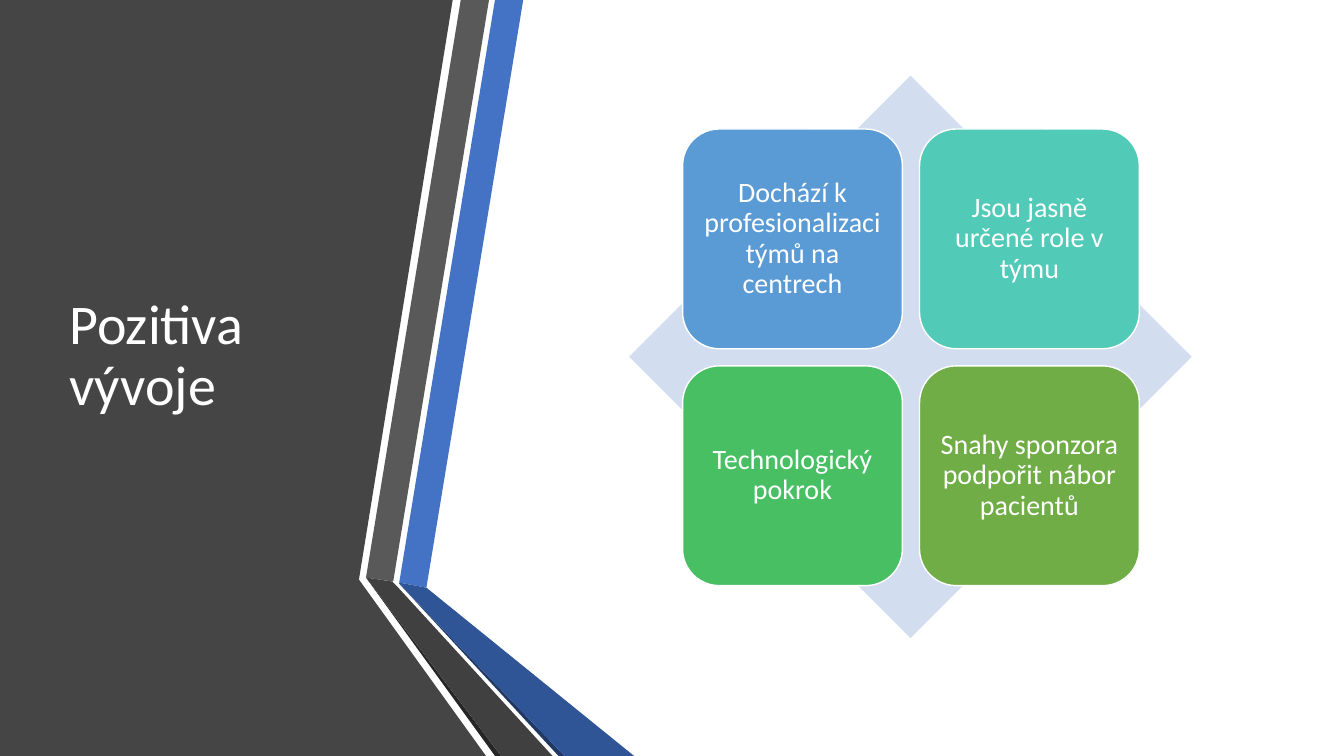
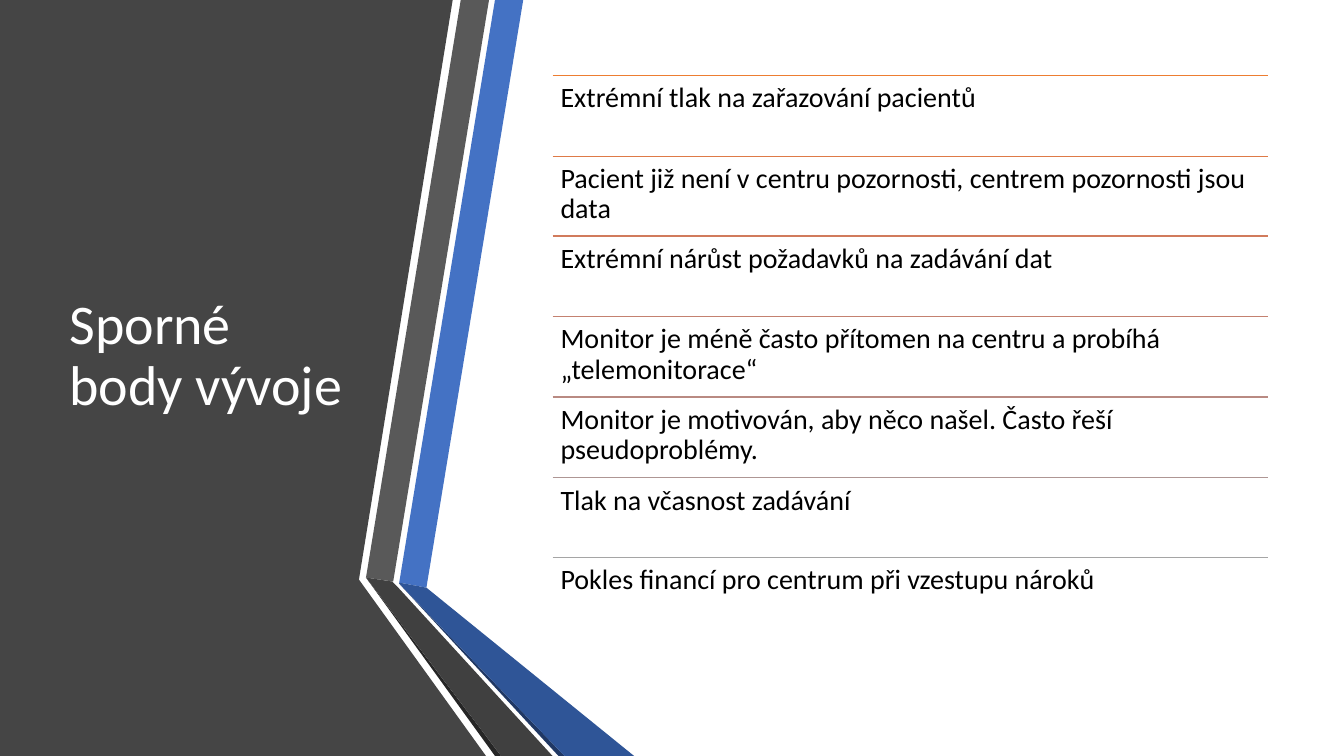
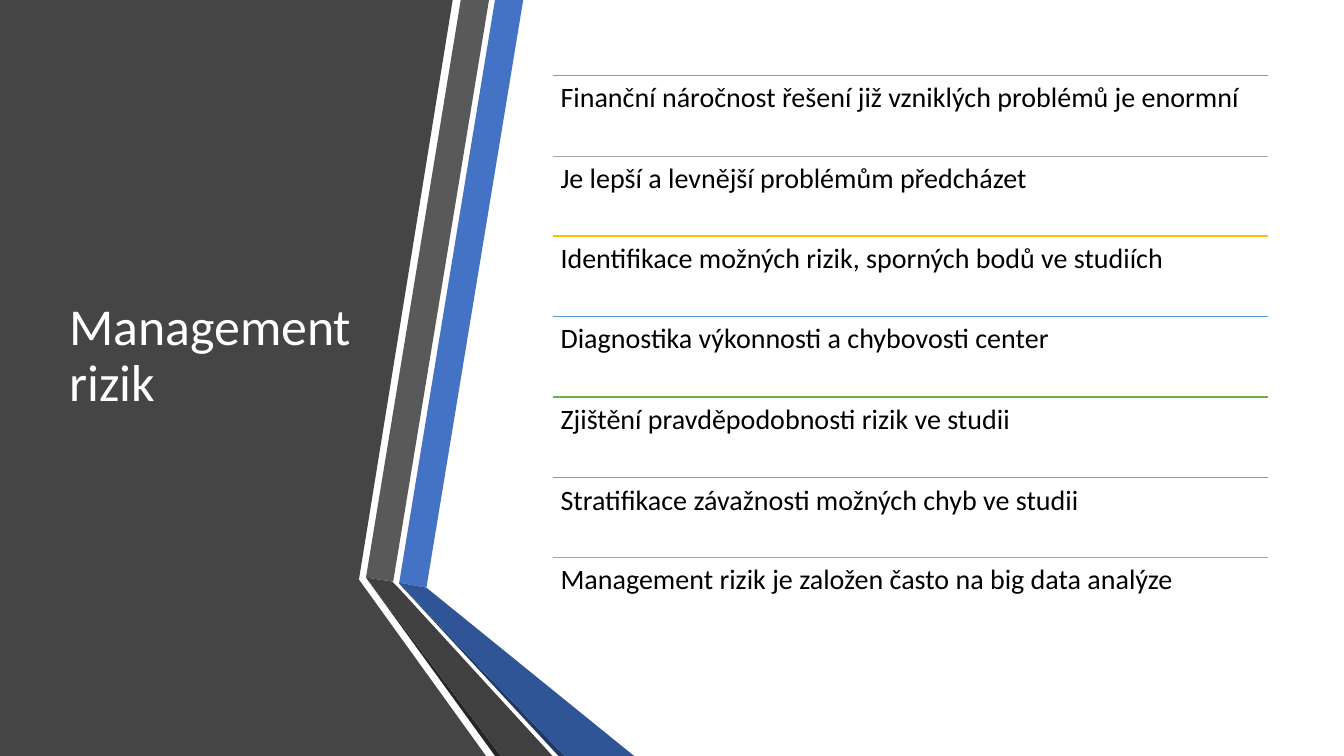
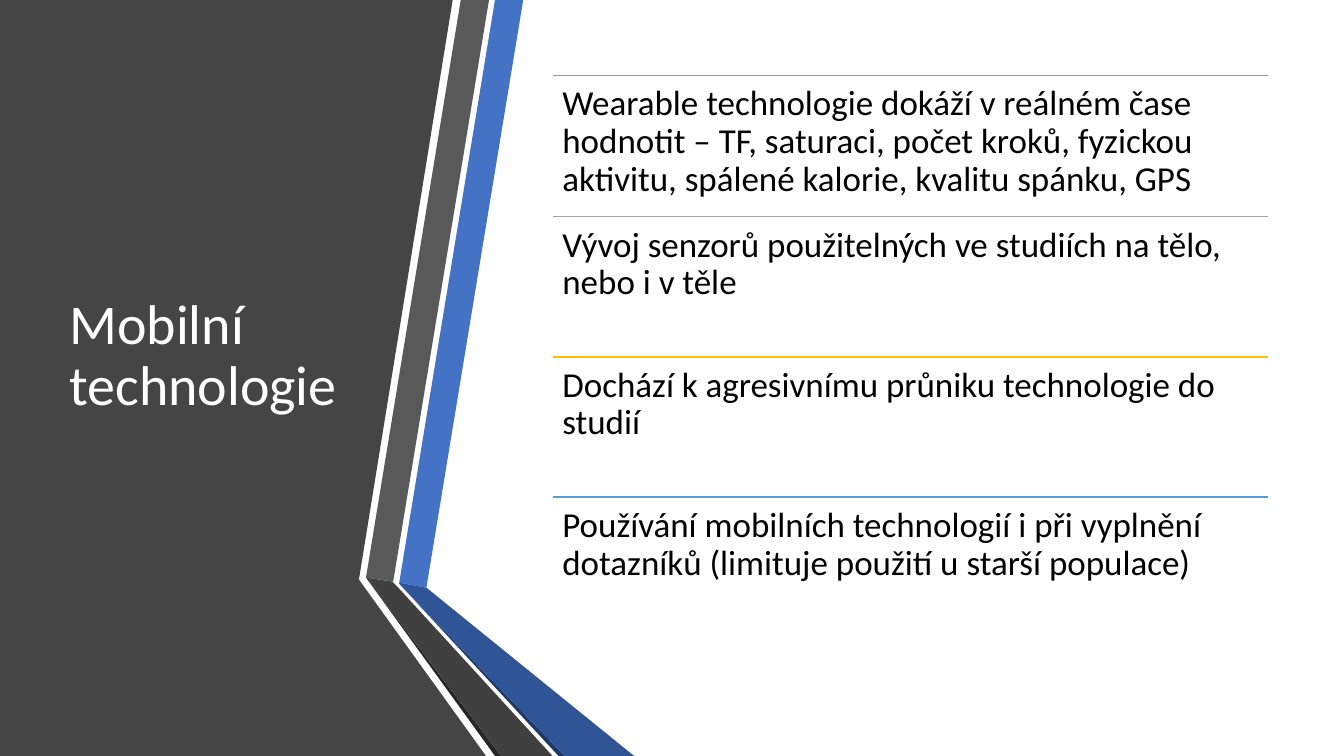
from itertools import cycle

from lxml import etree
from pptx import Presentation
from pptx.dml.color import RGBColor
from pptx.enum.shapes import MSO_CONNECTOR, MSO_SHAPE
from pptx.enum.text import MSO_ANCHOR, PP_ALIGN
from pptx.oxml.ns import qn
from pptx.util import Pt

PX = 9144  # EMU per px, 100 px to the inch
SLIDE_WIDTH, SLIDE_HEIGHT = 1333, 750

DIAMOND = MSO_SHAPE.DIAMOND
ROUNDED = MSO_SHAPE.ROUNDED_RECTANGLE
STRAIGHT = MSO_CONNECTOR.STRAIGHT
TOP, MIDDLE = MSO_ANCHOR.TOP, MSO_ANCHOR.MIDDLE
LEFT, CENTER = PP_ALIGN.LEFT, PP_ALIGN.CENTER

FONT = "Calibri"
WHITE, BLACK = "FFFFFF", "000000"
ACCENTS = ["ED7D31", "A5A5A5", "FFC000", "5B9BD5", "70AD47"]
ORANGE_TO_GRAY = ["ED7D31", "DE7A47", "D17B5C", "C48170", "B98A82", "AE9694", "A5A5A5"]

CONTENT_TOP, CONTENT_HEIGHT = 75, 558
LIST_LEFT, LIST_WIDTH = 548, 710

# Colour and corner points of the side panel and its folded bands, back to front
BACKDROP = [
    ("454545", [(0, 0), (449, 0), (356, 575), (482, 750), (0, 750)]),
    ("4472C4", [(396, 578), (423, 583), (519, 0), (491, 0)]),
    ("595959", [(485, 0), (457, 0), (363, 573), (390, 577)]),
    ("262626", [(363, 573), (491, 750), (497, 750)]),
    ("203864", [(396, 579), (554, 750), (560, 750)]),
    ("2F5597", [(396, 579), (560, 750), (629, 750), (423, 583), (396, 578)]),
    ("404040", [(548, 750), (395, 583), (389, 577), (363, 573), (497, 750)]),
]


def rgb(color):
    return RGBColor.from_string(color)


def write(shape, text, size=20, color=BLACK, align=LEFT, anchor=TOP, inset=(8, 8)):
    """Fill a shape with one paragraph; a newline becomes a line break."""
    frame = shape.text_frame
    frame.word_wrap = True
    frame.vertical_anchor = anchor
    frame.margin_left = frame.margin_right = inset[0] * PX
    frame.margin_top = frame.margin_bottom = inset[1] * PX
    paragraph = frame.paragraphs[0]
    paragraph.alignment = align
    paragraph.line_spacing = 0.9
    for index, line in enumerate(text.split("\n")):
        if index:
            paragraph.add_line_break()
        run = paragraph.add_run()
        run.text = line
        run.font.name = FONT
        run.font.size = Pt(size)
        run.font.color.rgb = rgb(color)


class Deck:
    def __init__(self):
        self.presentation = Presentation()
        self.presentation.slide_width = SLIDE_WIDTH * PX
        self.presentation.slide_height = SLIDE_HEIGHT * PX
        self.slide = None

    def new_slide(self, title, title_size=40):
        self.slide = self.presentation.slides.add_slide(self.presentation.slide_layouts[6])
        for color, points in BACKDROP:
            self.polygon(points, color)
        self.text(59, CONTENT_TOP, 304, CONTENT_HEIGHT, title,
                  size=title_size, color=WHITE, anchor=MIDDLE, inset=(10, 5))

    def paint(self, shape, fill, outline=None):
        shape.shadow.inherit = False
        shape.fill.solid()
        shape.fill.fore_color.rgb = rgb(fill)
        if outline:
            shape.line.color.rgb = rgb(outline)
            shape.line.width = Pt(1)
        else:
            shape.line.fill.background()

    def polygon(self, points, fill):
        builder = self.slide.shapes.build_freeform(*points[0], scale=PX)
        builder.add_line_segments(points[1:], close=True)
        self.paint(builder.convert_to_shape(), fill)

    def shape(self, kind, left, top, width, height, fill, outline=None):
        shape = self.slide.shapes.add_shape(kind, left * PX, top * PX, width * PX, height * PX)
        self.paint(shape, fill, outline)
        return shape

    def text(self, left, top, width, height, text, **style):
        box = self.slide.shapes.add_textbox(left * PX, top * PX, width * PX, height * PX)
        write(box, text, **style)

    def rule(self, left, top, width, color):
        line = self.slide.shapes.add_connector(
            STRAIGHT, left * PX, top * PX, (left + width) * PX, top * PX)
        line.line.color.rgb = rgb(color)
        line.line.width = Pt(1)
        etree.SubElement(line._element.spPr, qn("a:effectLst"))

    def ruled_list(self, items, colors, **style):
        """Share the content height equally among items, each under a rule."""
        for index, (item, color) in enumerate(zip(items, cycle(colors))):
            top = CONTENT_TOP + round(index * CONTENT_HEIGHT / len(items))
            self.rule(LIST_LEFT, top, LIST_WIDTH, color)
            self.text(LIST_LEFT, top, LIST_WIDTH, CONTENT_HEIGHT // len(items), item, **style)

    def card_grid(self, cards):
        """Place four cards, two to a row, over a diamond."""
        left, top, size, step = 677, 128, 218, 235
        self.shape(DIAMOND, 624, CONTENT_TOP, CONTENT_HEIGHT, CONTENT_HEIGHT, "D2DEEF")
        for index, (label, fill) in enumerate(cards):
            row, column = divmod(index, 2)
            card = self.shape(ROUNDED, left + column * step, top + row * step,
                              size, size, fill, WHITE)
            write(card, label, color=WHITE, align=CENTER, anchor=MIDDLE)


def main():
    deck = Deck()

    deck.new_slide("Pozitiva vývoje")
    deck.card_grid([
        ("Dochází k profesionalizaci týmů na centrech", "5B9BD5"),
        ("Jsou jasně určené role v týmu", "52CAB8"),
        ("Technologický pokrok", "49BF64"),
        ("Snahy sponzora podpořit nábor pacientů", "70AD47"),
    ])

    deck.new_slide("Sporné\nbody vývoje")
    deck.ruled_list([
        "Extrémní tlak na zařazování pacientů",
        "Pacient již není v centru pozornosti, centrem pozornosti jsou data",
        "Extrémní nárůst požadavků na zadávání dat",
        "Monitor je méně často přítomen na centru a probíhá „telemonitorace“",
        "Monitor je motivován, aby něco našel. Často řeší pseudoproblémy.",
        "Tlak na včasnost zadávání",
        "Pokles financí pro centrum při vzestupu nároků",
    ], ORANGE_TO_GRAY)

    deck.new_slide("Management rizik", title_size=37)
    deck.ruled_list([
        "Finanční náročnost řešení již vzniklých problémů je enormní",
        "Je lepší a levnější problémům předcházet",
        "Identifikace možných rizik, sporných bodů ve studiích",
        "Diagnostika výkonnosti a chybovosti center",
        "Zjištění pravděpodobnosti rizik ve studii",
        "Stratifikace závažnosti možných chyb ve studii",
        "Management rizik je založen často na big data analýze",
    ], ACCENTS)

    deck.new_slide("Mobilní technologie")
    deck.ruled_list([
        "Wearable technologie dokáží v reálném čase hodnotit – TF, saturaci, "
        "počet kroků, fyzickou aktivitu, spálené kalorie, kvalitu spánku, GPS",
        "Vývoj senzorů použitelných ve studiích na tělo, nebo i v těle",
        "Dochází k agresivnímu průniku technologie do studií",
        "Používání mobilních technologií i při vyplnění dotazníků "
        "(limituje použití u starší populace)",
    ], ACCENTS, size=25, inset=(10, 10))

    deck.presentation.save("out.pptx")


if __name__ == "__main__":
    main()
